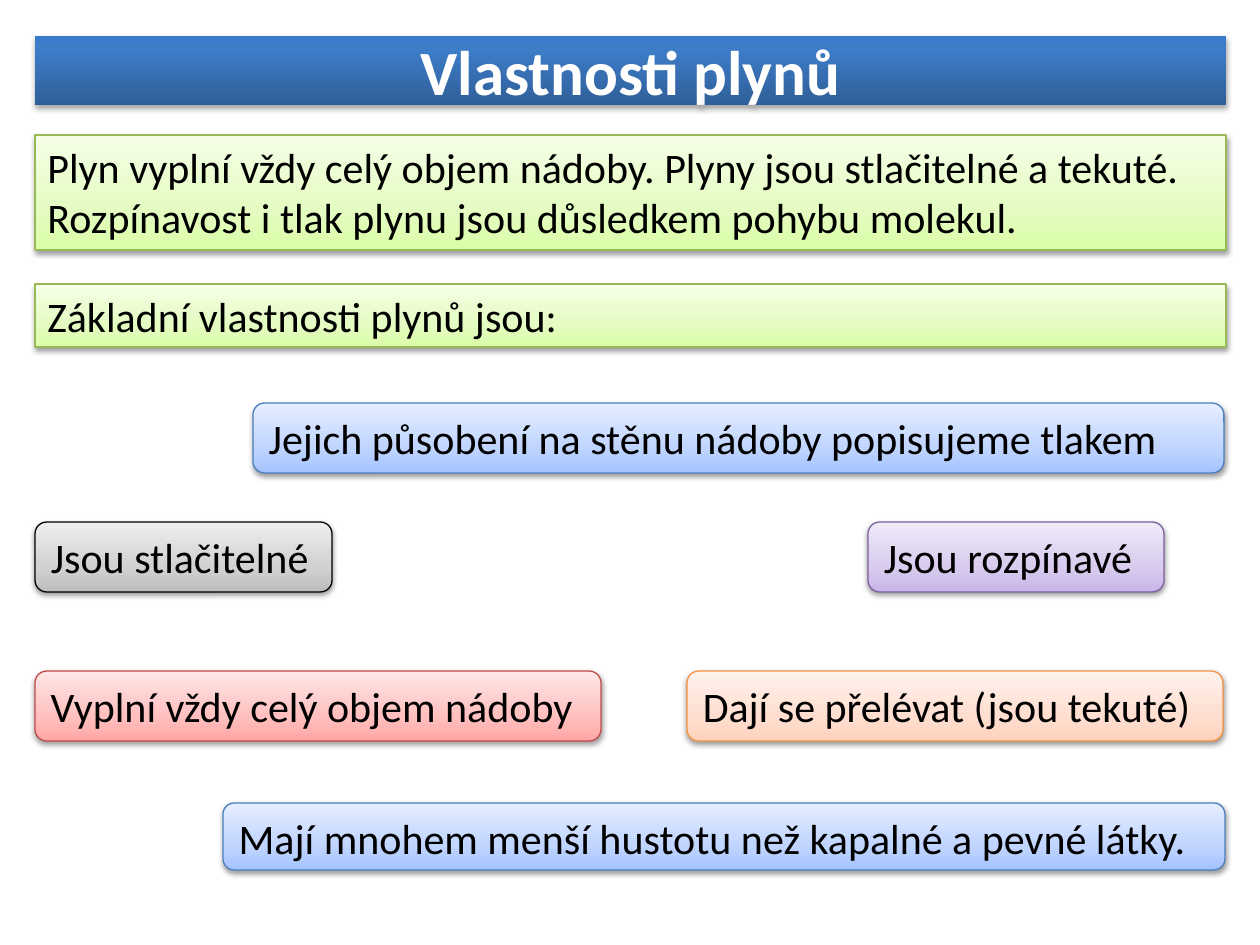
import copy
import lxml.etree
import pptx
import pptx.dml.color
import pptx.enum.shapes
import pptx.enum.text
import pptx.oxml
import pptx.oxml.ns
import pptx.util

PX = 914400 / 126
SHAPES = pptx.enum.shapes.MSO_SHAPE
ALIGN = pptx.enum.text.PP_ALIGN
ANCHOR = pptx.enum.text.MSO_ANCHOR
FIT = pptx.enum.text.MSO_AUTO_SIZE

deck = pptx.Presentation()
deck.slide_width = pptx.util.Emu(round(1260 * PX))
deck.slide_height = pptx.util.Emu(round(945 * PX))
page = deck.slides.add_slide(deck.slide_layouts[6])


def colour(value):
    return pptx.dml.color.RGBColor.from_string(value)


def add_box(text, *, at, stops, middle=35, line=None, kind=SHAPES.ROUNDED_RECTANGLE,
            size=24, ink="000000", bold=False, align=ALIGN.LEFT, anchor=ANCHOR.TOP,
            fit=FIT.SHAPE_TO_FIT_TEXT, shade=38, drop=20000):
    box = page.shapes.add_shape(kind, *[pptx.util.Emu(round(n * PX)) for n in at])
    box.fill.gradient()
    box.fill.gradient_angle = 90
    properties = box._element.spPr
    stop_list = properties.find(".//" + pptx.oxml.ns.qn("a:gsLst"))
    stop_list.append(copy.deepcopy(stop_list[-1]))
    for stop, value, position in zip(box.fill.gradient_stops, stops, (0, middle, 100)):
        stop.color.rgb = colour(value)
        stop.position = position / 100
    if line:
        box.line.color.rgb = colour(line)
        box.line.width = pptx.util.Pt(0.75)
    else:
        box.line.fill.background()

    box.shadow.inherit = False
    effects = properties.find(pptx.oxml.ns.qn("a:effectLst"))
    shadow = lxml.etree.SubElement(
        effects, pptx.oxml.ns.qn("a:outerShdw"),
        blurRad="40000", dist=str(drop), dir="5400000", rotWithShape="0")
    tint = lxml.etree.SubElement(shadow, pptx.oxml.ns.qn("a:srgbClr"), val=str(colour("000000")))
    lxml.etree.SubElement(tint, pptx.oxml.ns.qn("a:alpha"), val=str(shade * 1000))

    frame = box.text_frame
    frame.word_wrap = True
    frame.auto_size = fit
    frame.vertical_anchor = anchor
    para = frame.paragraphs[0]
    para.alignment = align
    span = para.add_run()
    span.text = text
    span.font.name = "Calibri"
    span.font.size = pptx.util.Pt(size)
    span.font.bold = bold
    span.font.color.rgb = colour(ink)


green = {"stops": ("DAFDA7", "E4FCC2", "F5FFE7"), "line": "98B955", "kind": SHAPES.RECTANGLE}
blue = {"stops": ("A4C4FF", "BFD4FF", "E6EEFF"), "line": "4B7EBC"}
red = {"stops": ("FFA6A5", "FFC0BF", "FFE7E7"), "line": "BF4C48"}
grey = {"stops": ("BDBDBD", "D1D1D1", "EEEEEE"), "line": "000000"}
orange = {"stops": ("FFD2BD", "FFDED0", "FFF2ED"), "line": "F69240"}
purple = {"stops": ("C9B5E8", "D8CBEE", "F0EAF9"), "line": "7D60A0"}

add_box("Vlastnosti plynů", at=(35, 36, 1191, 69), stops=("2F5F99", "3D7CC7", "3A7CCB"),
        middle=80, kind=SHAPES.RECTANGLE, size=36, ink="FFFFFF", bold=True,
        align=ALIGN.CENTER, anchor=ANCHOR.MIDDLE, fit=FIT.NONE, shade=35, drop=23000)

statements = [
    ("Plyn vyplní vždy celý objem nádoby. Plyny jsou stlačitelné a tekuté. "
     "Rozpínavost i tlak plynu jsou důsledkem pohybu molekul.", (35, 135, 1191, 115), green),
    ("Mají mnohem menší hustotu než kapalné a pevné látky.", (223, 803, 1002, 67),
     {**blue, "fit": FIT.NONE}),
    ("Vyplní vždy celý objem nádoby", (35, 671, 566, 70), red),
    ("Jsou stlačitelné", (35, 522, 297, 70), grey),
    ("Dají se přelévat (jsou tekuté)", (687, 671, 536, 70), orange),
    ("Jejich působení na stěnu nádoby popisujeme tlakem", (253, 403, 971, 70), blue),
    ("Jsou rozpínavé", (868, 522, 296, 70), purple),
    ("Základní vlastnosti plynů jsou:", (35, 284, 1191, 63), green),
]
for text, place, style in statements:
    add_box(text, at=place, **style)

deck.save("out.pptx")
